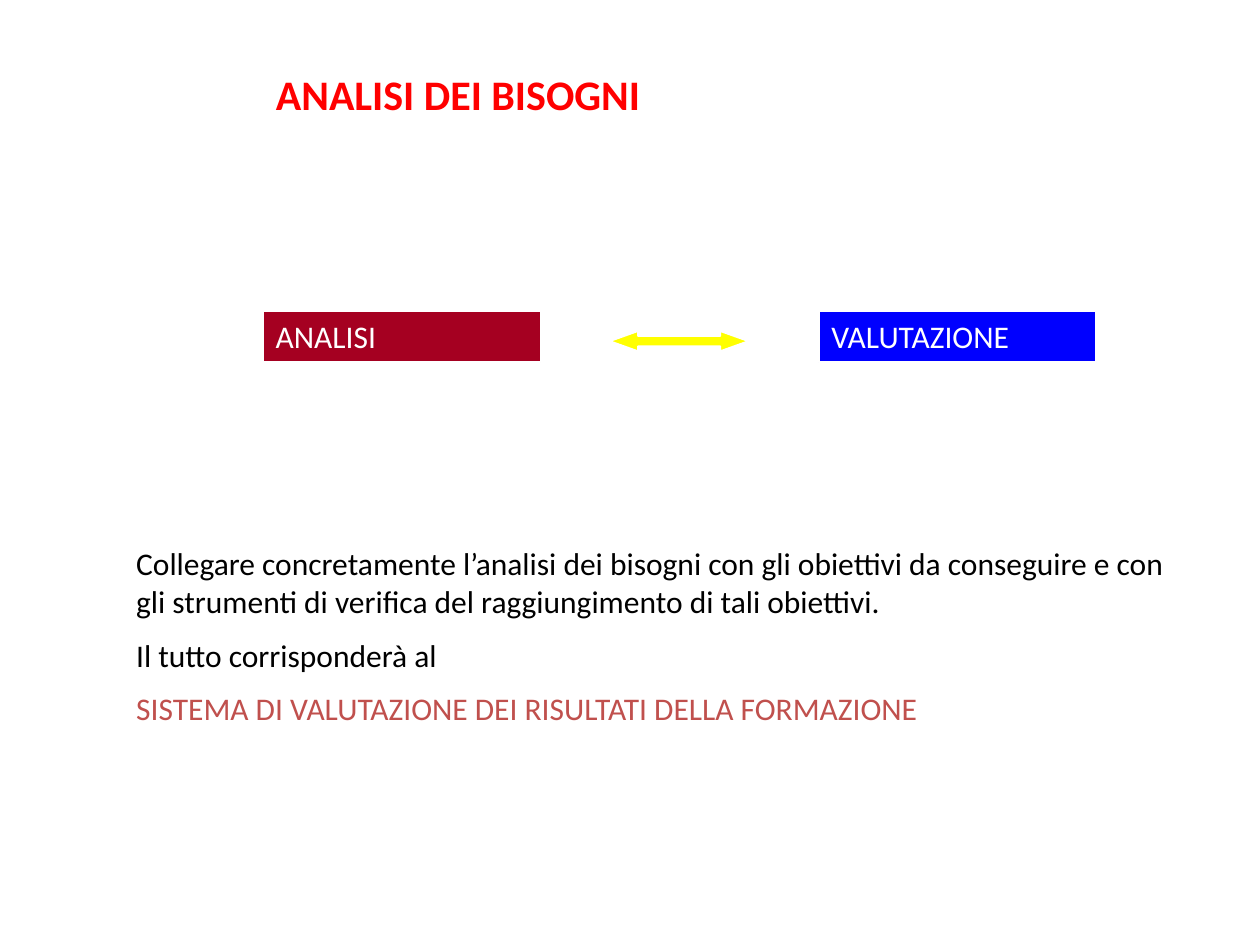
"""Build the needs analysis slide linking analysis and evaluation."""
from dataclasses import dataclass

from lxml import etree
from pptx import Presentation
from pptx.dml.color import RGBColor
from pptx.enum.shapes import MSO_SHAPE
from pptx.enum.text import MSO_ANCHOR, MSO_AUTO_SIZE, PP_ALIGN
from pptx.oxml.ns import qn
from pptx.util import Pt

RECTANGLE = MSO_SHAPE.RECTANGLE
DOUBLE_ARROW = MSO_SHAPE.LEFT_RIGHT_ARROW
TOP = MSO_ANCHOR.TOP
NO_AUTOFIT = MSO_AUTO_SIZE.NONE
LEFT = PP_ALIGN.LEFT

FONT = "Calibri"
TEXT_SIZE = 18
COLORS = {
    "title": "FF0000",
    "analysis": "A50021",
    "evaluation": "0000FF",
    "arrow": "FFFF00",
    "white": "FFFFFF",
    "text": "000000",
    "system": "C0504D",
}


@dataclass
class Frame:
    """Position and size in points."""

    left: float
    top: float
    width: float
    height: float


@dataclass
class Stage:
    """A filled shape, with its label if it has one."""

    kind: MSO_SHAPE
    frame: Frame
    color: str
    label: str = ""


@dataclass
class Line:
    """A paragraph and its look."""

    text: str
    color: str
    size: float = TEXT_SIZE
    bold: bool = False


TITLE_FRAME = Frame(150.5, 35.3, 447.8, 36)
BODY_FRAME = Frame(70.6, 307.4, 612, 115.2)
TITLE = [Line("ANALISI DEI BISOGNI", "title", 24, True)]
BODY = [
    Line(
        "Collegare concretamente l’analisi dei bisogni con gli obiettivi da conseguire "
        "e con gli strumenti di verifica del raggiungimento di tali obiettivi.",
        "text",
    ),
    Line("Il tutto corrisponderà al", "text"),
    Line("SISTEMA DI VALUTAZIONE DEI RISULTATI DELLA FORMAZIONE", "system"),
]
STAGES = [
    Stage(RECTANGLE, Frame(150.5, 177.8, 158.4, 29.2), "analysis", "ANALISI"),
    Stage(RECTANGLE, Frame(468, 177.8, 158.4, 29.2), "evaluation", "VALUTAZIONE"),
    Stage(DOUBLE_ARROW, Frame(348.5, 189.2, 79.2, 11.5), "arrow"),
]


def rgb(name: str) -> RGBColor:
    """Return the named colour."""
    return RGBColor.from_string(COLORS[name])


def write_lines(box, lines: list[Line]) -> None:
    """Write plain left-aligned paragraphs into a box."""
    frame = box.text_frame
    frame.word_wrap = True
    frame.auto_size = NO_AUTOFIT
    frame.vertical_anchor = TOP
    frame.text = "\n".join(line.text for line in lines)
    for para, line in zip(frame.paragraphs, lines):
        para.alignment = LEFT
        para.space_before = Pt(line.size / 2)
        properties = para._p.get_or_add_pPr()
        properties.set("marL", "0")
        properties.set("indent", "0")
        etree.SubElement(properties, qn("a:buNone"))
        for span in para.runs:
            span.font.name = FONT
            span.font.size = Pt(line.size)
            span.font.bold = line.bold
            span.font.color.rgb = rgb(line.color)


def fill_placeholder(box, frame: Frame, lines: list[Line]) -> None:
    """Move a placeholder and write its text."""
    box.left, box.top = Pt(frame.left), Pt(frame.top)
    box.width, box.height = Pt(frame.width), Pt(frame.height)
    write_lines(box, lines)


def draw_stage(page, stage: Stage) -> None:
    """Draw one filled shape of the diagram."""
    frame = stage.frame
    box = page.shapes.add_shape(
        stage.kind, Pt(frame.left), Pt(frame.top), Pt(frame.width), Pt(frame.height)
    )
    box.shadow.inherit = False
    box.fill.solid()
    box.fill.fore_color.rgb = rgb(stage.color)
    box.line.color.rgb = rgb("white")
    box.line.width = Pt(1)
    if stage.kind == DOUBLE_ARROW:
        box.adjustments[0] = 0.5
        box.adjustments[1] = 1.4
    if stage.label:
        write_lines(box, [Line(stage.label, "white")])


def main() -> None:
    """Build and save the deck."""
    deck = Presentation()
    deck.slide_width, deck.slide_height = Pt(720), Pt(540)
    page = deck.slides.add_slide(deck.slide_layouts[1])
    fill_placeholder(page.shapes.title, TITLE_FRAME, TITLE)
    fill_placeholder(page.placeholders[1], BODY_FRAME, BODY)
    for stage in STAGES:
        draw_stage(page, stage)
    deck.save("out.pptx")


if __name__ == "__main__":
    main()
